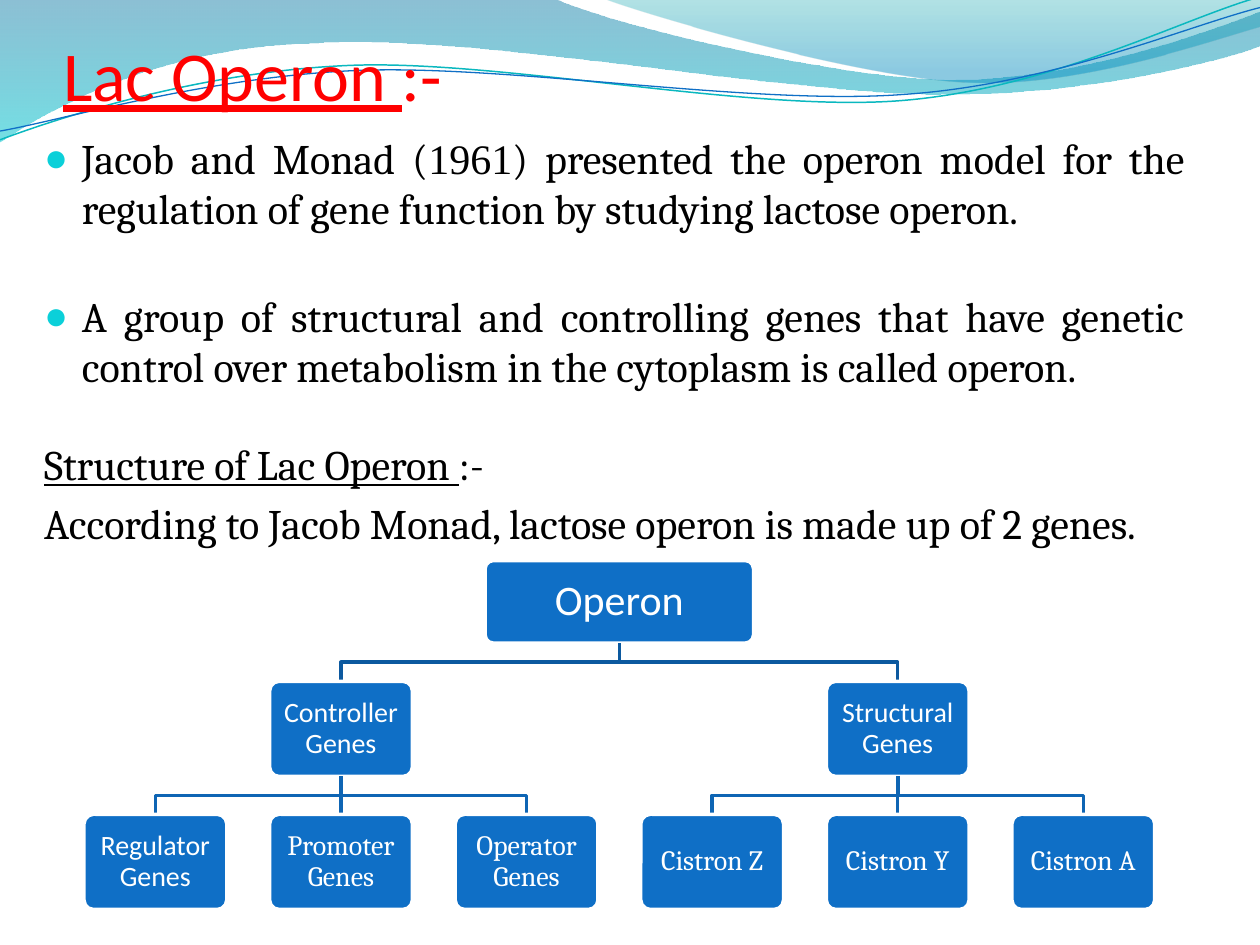
from math import cos, radians, sin

from lxml.etree import SubElement
from pptx import Presentation
from pptx.dml.color import RGBColor
from pptx.enum.shapes import MSO_SHAPE
from pptx.enum.text import MSO_ANCHOR, MSO_AUTO_SIZE, PP_ALIGN
from pptx.oxml.ns import qn
from pptx.util import Pt

# Boxes are left, top, width, height in points.
# In outlines a pair is a corner and six numbers are a Bezier curve.
WAVES = [
    ((-0.7, -0.7, 721.4, 82.1),
     [(0, 0), (317, -0.7), (342.7, 12.2, 478, 45.4, 545.8, 45.4),
      (614.2, 45.4, 689.8, 18.7, 720, 6.5), (720.7, 25.9),
      (707.8, 31.7, 626.4, 54.7, 537.1, 54), (447.8, 54, 275, 20.2, 185, 24.5),
      (92.9, 25.9, 33.1, 59.8, -0.7, 81.4), (0, 0)],
     [(0, "0074A1", 45), (1, "00C6CF", 55)]),
    ((344.9, -0.7, 375.1, 50.4),
     [(344.9, -0.7), (366.5, 7.9, 491, 44.6, 553.7, 46.8),
      (616.3, 49.7, 691.9, 23, 720, 15.1), (720, 0), (344.9, -0.7)],
     [(0, "00A1A9", 30), (0.8, "008BBF", 45)]),
]
RIPPLE_TILT = -2.7
RIPPLES = [
    ((-1.4, 15.8, 721.4, 51.1),
     [(0, 79.9), (34.6, 67, 113.8, 41, 199.4, 37.4),
      (284.4, 33.8, 427, 64.1, 513.4, 57.6),
      (599.8, 51.1, 675.4, 10.8, 718.6, -1.4)], "0AB8BF", 0.85),
    ((-1.4, 21.6, 722.2, 41.8),
     [(0, 74.9), (33.8, 69.1, 118.1, 43.9, 203.8, 40.3),
      (290.2, 36.7, 429.8, 60.5, 516.2, 54),
      (601.9, 48.2, 677.5, 15.1, 720, 4.3)], "0F6FC6", 0.75),
]
HEADING = [("Lac Operon ", "Calibri", True), (":-", "Calibri", False)]
# (bulleted, space before, runs of text, font, underline)
BODY = [
    (True, 4.8, [("Jacob and Monad (", "Cambria", False),
                 ("1961", "Times New Roman", False),
                 (") presented the operon model for the regulation of gene function "
                  "by studying lactose operon.", "Cambria", False)]),
    (True, 32.8, [("A group of structural and controlling genes that have genetic control "
                   "over metabolism in the cytoplasm is called operon.", "Cambria", False)]),
    (False, 27, [("Structure of Lac Operon ", "Cambria", True), (":-", "Cambria", False)]),
    (False, 4.8, [("According to Jacob Monad, lactose operon is made up of 2 genes.",
                   "Cambria", False)]),
]
ROOT = "Operon"
BRANCHES = [
    ("Controller Genes", [("Regulator Genes", "Calibri"), ("Promoter Genes", "Cambria"),
                          ("Operator Genes", "Cambria")]),
    ("Structural Genes", [("Cistron Z", "Cambria"), ("Cistron Y", "Cambria"),
                          ("Cistron A", "Cambria")]),
]
LEVEL_TOPS = (320.3, 389.3, 465.3)
ROOT_SIZE, GENE_SIZE = (153.4, 47.2), (81.6, 54.4)
FIRST_LEAF, LEAF_PITCH = 88.8, 106.05


def rgb(code):
    return RGBColor.from_string(code)


def add_path(shapes, box, outline, closed=False, tilt=0):
    """Draw corners and curves in a box; a tilted box keeps the outline where it is."""
    left, top, width, height = box
    builder = shapes.build_freeform(Pt(left), Pt(top))
    builder.add_line_segments([(Pt(left + width), Pt(top + height))], close=False)
    shape = builder.convert_to_shape()
    shape.shadow.inherit = False
    shape.rotation = tilt % 360
    turn = radians(-tilt)
    path = next(shape.element.iter(qn("a:path")))
    for command in list(path):
        path.remove(command)
    for index, part in enumerate(outline):
        kind = "a:cubicBezTo" if len(part) == 6 else "a:lnTo" if index else "a:moveTo"
        command = SubElement(path, qn(kind))
        for x, y in zip(part[::2], part[1::2]):
            dx, dy = x - left - width / 2, y - top - height / 2
            SubElement(command, qn("a:pt"),
                       x=str(Pt(width / 2 + dx * cos(turn) - dy * sin(turn))),
                       y=str(Pt(height / 2 + dx * sin(turn) + dy * cos(turn))))
    if closed:
        SubElement(path, qn("a:close"))
    return shape


def add_stroke(shapes, box, outline, color, width, tilt=0):
    stroke = add_path(shapes, box, outline, tilt=tilt)
    stroke.fill.background()
    stroke.line.color.rgb = rgb(color)
    stroke.line.width = Pt(width)


def add_wave(shapes, box, outline, stops):
    wave = add_path(shapes, box, outline, closed=True)
    wave.line.fill.background()
    wave.fill.gradient()
    wave.fill.gradient_angle = 270
    for stop, (position, color, _) in zip(wave.fill.gradient_stops, stops):
        stop.position = position
        stop.color.rgb = rgb(color)
    for tint, (_, _, opacity) in zip(wave.element.spPr.iter(qn("a:srgbClr")), stops):
        SubElement(tint, qn("a:alpha"), val=str(opacity * 1000))


def add_runs(paragraph, parts, size, color):
    for text, font, underline in parts:
        run = paragraph.add_run()
        run.text = text
        run.font.name, run.font.size = font, Pt(size)
        run.font.underline = underline
        run.font.color.rgb = rgb(color)


def place(shape, left, top, width, height):
    shape.left, shape.top, shape.width, shape.height = map(Pt, (left, top, width, height))
    shape.text_frame.auto_size = MSO_AUTO_SIZE.NONE
    shape.text_frame.word_wrap = True


def fill_title(title):
    place(title, 36, 0, 648, 66)
    frame = title.text_frame
    frame.vertical_anchor = MSO_ANCHOR.BOTTOM
    frame.margin_left = frame.margin_right = frame.margin_bottom = 0
    frame.paragraphs[0].alignment = PP_ALIGN.LEFT
    add_runs(frame.paragraphs[0], HEADING, 40, "FF0000")


def fill_body(body):
    place(body, 18, 72, 666, 330)
    frame = body.text_frame
    for index, (bulleted, space, parts) in enumerate(BODY):
        paragraph = frame.add_paragraph() if index else frame.paragraphs[0]
        paragraph.alignment = PP_ALIGN.JUSTIFY
        paragraph.space_before = Pt(space)
        properties = paragraph._p.get_or_add_pPr()
        properties.set("marL", str(Pt(21.6)))
        properties.set("indent", str(-Pt(21.6)))
        if bulleted:
            tint = SubElement(properties, qn("a:buClr"))
            SubElement(tint, qn("a:srgbClr"), val="0BD0D9")
            SubElement(properties, qn("a:buSzPct"), val="95000")
            SubElement(properties, qn("a:buChar"), char="●")
        else:
            SubElement(properties, qn("a:buNone"))
        add_runs(paragraph, parts, 24, "000000")


def add_link(shapes, x1, y1, x2, y2, color):
    if abs(x1 - x2) < 0.1:
        add_stroke(shapes, (x1 - 3.6, y1, 7.2, y2 - y1), [(x1, y1), (x1, y2)], color, 2)
        return
    middle = (y1 + y2) / 2
    add_stroke(shapes, (min(x1, x2), y1, abs(x2 - x1), y2 - y1),
               [(x1, y1), (x1, middle), (x2, middle), (x2, y2)], color, 2)


def add_box(shapes, label, center, top, box_size, font="Calibri", size=16):
    width, height = box_size
    box = shapes.add_shape(MSO_SHAPE.ROUNDED_RECTANGLE, Pt(center - width / 2), Pt(top),
                           Pt(width), Pt(height))
    box.adjustments[0] = 0.1
    box.shadow.inherit = False
    box.fill.solid()
    box.fill.fore_color.rgb = rgb("0F6FC6")
    box.line.color.rgb = rgb("FFFFFF")
    box.line.width = Pt(2)
    frame = box.text_frame
    frame.word_wrap = True
    frame.vertical_anchor = MSO_ANCHOR.MIDDLE
    frame.margin_left = frame.margin_right = frame.margin_top = frame.margin_bottom = Pt(6)
    paragraph = frame.paragraphs[0]
    paragraph.alignment = PP_ALIGN.CENTER
    paragraph.line_spacing = 0.9
    add_runs(paragraph, [(label, font, False)], size, "FFFFFF")


def add_tree(shapes):
    root_top, branch_top, leaf_top = LEVEL_TOPS
    root_bottom, branch_bottom = root_top + ROOT_SIZE[1], branch_top + GENE_SIZE[1]
    leaf_count = sum(len(leaves) for _, leaves in BRANCHES)
    centers = [FIRST_LEAF + LEAF_PITCH * i for i in range(leaf_count)]
    root_center = sum(centers) / leaf_count
    add_box(shapes, ROOT, root_center, root_top, ROOT_SIZE, size=24)
    for branch, leaves in BRANCHES:
        own, centers = centers[:len(leaves)], centers[len(leaves):]
        middle = sum(own) / len(own)
        add_link(shapes, root_center, root_bottom, middle, branch_top, "0C599F")
        add_box(shapes, branch, middle, branch_top, GENE_SIZE)
        for (leaf, font), center in zip(leaves, own):
            add_link(shapes, middle, branch_bottom, center, leaf_top, "0E65B4")
            add_box(shapes, leaf, center, leaf_top, GENE_SIZE, font)


def main():
    presentation = Presentation()
    presentation.slide_width, presentation.slide_height = Pt(720), Pt(540)
    slide = presentation.slides.add_slide(presentation.slide_layouts[1])
    title, body = slide.placeholders
    for wave in WAVES:
        add_wave(slide.shapes, *wave)
    ripples = slide.shapes.add_group_shape().shapes
    for ripple in RIPPLES:
        add_stroke(ripples, *ripple, tilt=RIPPLE_TILT)
    for placeholder in (title, body):  # text lies above the waves
        placeholder.element.getparent().append(placeholder.element)
    fill_title(title)
    fill_body(body)
    add_tree(slide.shapes.add_group_shape().shapes)
    presentation.save("out.pptx")


if __name__ == "__main__":
    main()
